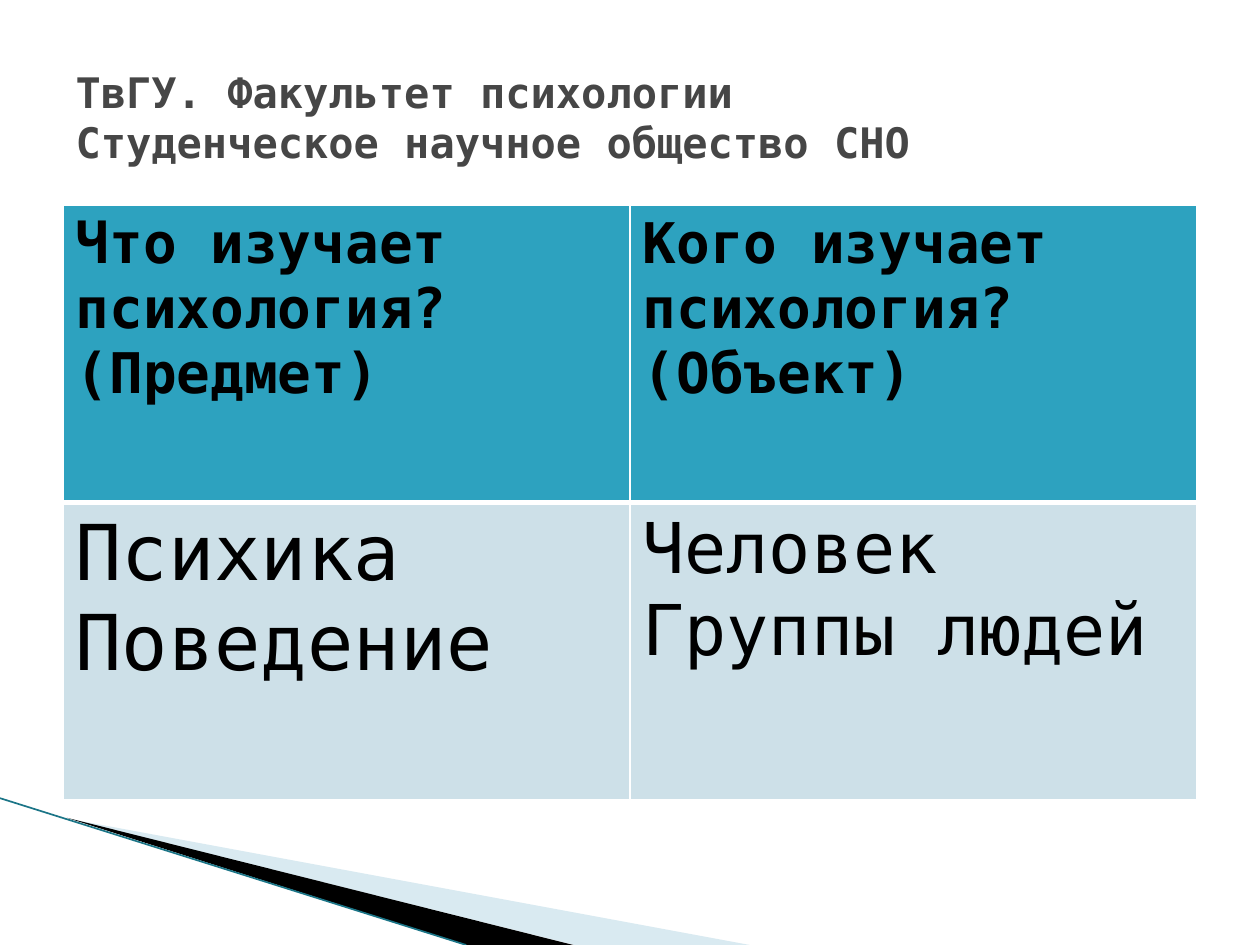
import pptx
import pptx.dml.color
import pptx.enum.dml
import pptx.enum.shapes
import pptx.enum.text
import pptx.oxml
import pptx.oxml.ns
import pptx.util

COLS, ROWS = 20, 15


def color(code):
    return pptx.dml.color.RGBColor.from_string(code)


def add_node(parent, tag, **attrs):
    node = pptx.oxml.parse_xml(f'<a:{tag} {pptx.oxml.ns.nsdecls("a")}/>')
    for key, value in attrs.items():
        node.set(key, str(value))
    parent.append(node)
    return node


class Deck:
    """Places elements on one slide by columns and rows of a 20 by 15 grid."""

    font = "DejaVu Sans Mono"
    ink, gray, white = "000000", "464646", "FFFFFF"
    head, body = "2DA2BF", "CDE0E8"
    pale, edge = "A0CBDC", "1B7587"

    def __init__(self):
        self.prs = pptx.Presentation()
        self.prs.slide_width = pptx.util.Inches(10)
        self.prs.slide_height = pptx.util.Inches(7.5)
        self.slide = self.prs.slides.add_slide(self.prs.slide_layouts[5])
        self.shapes = self.slide.shapes
        fill = self.slide.background.fill
        fill.solid()
        fill.fore_color.rgb = color(self.white)

    def spot(self, col, row):
        return (round(col * self.prs.slide_width / COLS),
                round(row * self.prs.slide_height / ROWS))

    def style(self, para, size, code, bold):
        para.alignment = pptx.enum.text.PP_ALIGN.LEFT
        font = para.font
        font.name, font.size, font.bold = self.font, pptx.util.Pt(size), bold
        font.color.rgb = color(code)

    def title(self, box, text):
        shape = self.shapes.title
        shape.left, shape.top = self.spot(*box[:2])
        shape.width, shape.height = self.spot(*box[2:])
        frame = shape.text_frame
        frame.text = text
        frame.word_wrap = True
        frame.auto_size = pptx.enum.text.MSO_AUTO_SIZE.NONE
        frame.vertical_anchor = pptx.enum.text.MSO_ANCHOR.MIDDLE
        self.style(frame.paragraphs[0], 24, self.gray, True)

    def wedge(self, points, code, alpha=100):
        first, *rest = [self.spot(*point) for point in points]
        pen = self.shapes.build_freeform(*first, scale=1.0)
        pen.add_line_segments(rest, close=True)
        shape = pen.convert_to_shape()
        shape.shadow.inherit = False
        shape.line.fill.background()
        shape.fill.solid()
        shape.fill.fore_color.rgb = color(code)
        if alpha < 100:
            tint = shape.fill._xPr.find(".//" + pptx.oxml.ns.qn("a:srgbClr"))
            add_node(tint, "alpha", val=alpha * 1000)

    def line(self, start, end, code, width):
        kind = pptx.enum.shapes.MSO_CONNECTOR.STRAIGHT
        line = self.shapes.add_connector(
            kind, *self.spot(*start), *self.spot(*end))
        line.line.color.rgb = color(code)
        line.line.width = pptx.util.Pt(width)
        add_node(line._element.spPr, "effectLst")

    def cell(self, cell, text, size, code, bold, sides):
        """Fill one cell; sides gives border widths by side letter."""
        cell.text = text
        for para in cell.text_frame.paragraphs:
            self.style(para, size, self.ink, bold)
        props = cell._tc.get_or_add_tcPr()
        for side, width in sides.items():
            edge = add_node(props, "ln" + side, w=pptx.util.Pt(width))
            add_node(add_node(edge, "solidFill"), "srgbClr", val=self.white)
        cell.fill.solid()
        cell.fill.fore_color.rgb = color(code)

    def table(self, box, rows, sizes):
        frame = self.shapes.add_table(
            len(rows), len(rows[0]), *self.spot(*box[:2]), *self.spot(*box[2:]))
        for r, texts in enumerate(rows):
            top = r == 0
            sides = dict(L=1, R=1, T=1 if top else 3, B=3 if top else 1)
            for c, text in enumerate(texts):
                self.cell(frame.table.cell(r, c), text, sizes[r][c],
                          self.head if top else self.body, top, sides)


def main():
    deck = Deck()
    deck.wedge([(1.1, 13), (11.9, 15), (9.12, 15)], deck.pale, 40)
    deck.wedge([(1.06, 12.98), (9.1, 15), (7.4, 15)], deck.ink)
    deck.line((0, 12.67), (7.4, 15), deck.edge, 0.95)
    deck.title((1, 0.6, 18, 2.5),
               "ТвГУ. Факультет психологии\vСтуденческое научное общество СНО")
    deck.table(
        (1, 3.25, 18, 9.45),
        [["Что изучает психология?\n(Предмет)",
          "Кого изучает психология?\n(Объект)"],
         ["Психика\nПоведение", "Человек\nГруппы людей"]],
        [[32, 32], [44, 40]])
    deck.prs.save("out.pptx")


if __name__ == "__main__":
    main()
